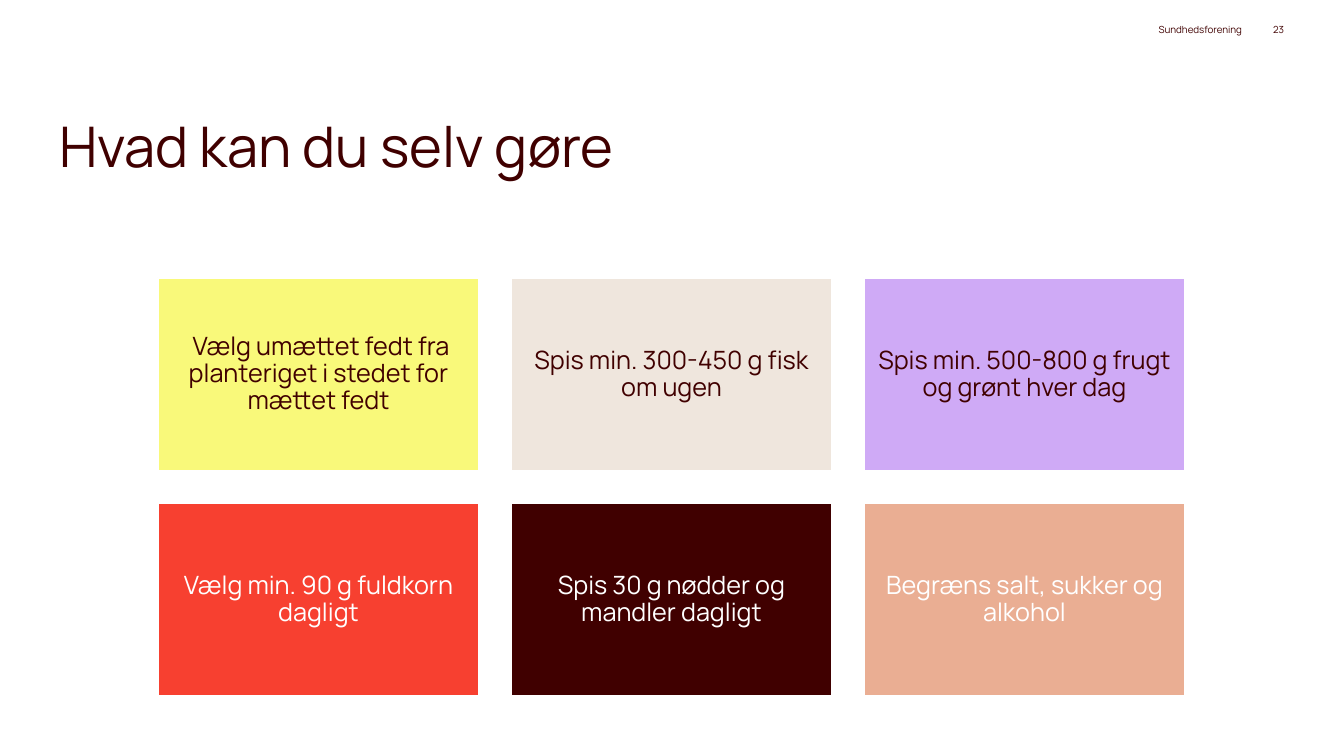
from itertools import product

from pptx import Presentation
from pptx.dml.color import RGBColor
from pptx.enum.shapes import MSO_SHAPE
from pptx.enum.text import MSO_ANCHOR, MSO_AUTO_SIZE, PP_ALIGN
from pptx.util import Emu, Pt

DARK, WHITE = "400000", "FFFFFF"


def px(n):
    return Emu(round(n * 914400 / 100.8))


def paint(target, color):
    target.rgb = RGBColor.from_string(color)


def assign(target, values):
    for name, value in values.items():
        setattr(target, name, value)


class Deck:
    font = "Manrope"

    def __init__(self, wide, high):
        self.file = Presentation()
        assign(self.file, {"slide_width": px(wide), "slide_height": px(high)})
        self.slide = self.file.slides.add_slide(self.file.slide_layouts[5])

    def letter(self, shape, text, size, color, align, anchor, inset=0, lead=1.0):
        frame = shape.text_frame
        sides = ("left", "top", "right", "bottom")
        assign(frame, {f"margin_{side}": px(inset) for side in sides})
        assign(frame, {"text": text, "word_wrap": True,
                       "auto_size": MSO_AUTO_SIZE.NONE, "vertical_anchor": anchor})
        line = frame.paragraphs[0]
        assign(line, {"alignment": align, "line_spacing": lead})
        font = line.runs[0].font
        assign(font, {"name": self.font, "size": Pt(size)})
        paint(font.color, color)

    def title(self, text, x, y, w, h):
        shape = self.slide.shapes.title
        assign(shape, {"left": px(x), "top": px(y), "width": px(w), "height": px(h)})
        self.letter(shape, text, 40, DARK, PP_ALIGN.LEFT, MSO_ANCHOR.BOTTOM, lead=0.95)

    def label(self, text, x, y, w, h):
        shape = self.slide.shapes.add_textbox(px(x), px(y), px(w), px(h))
        self.letter(shape, text, 7, DARK, PP_ALIGN.RIGHT, MSO_ANCHOR.MIDDLE)

    def card(self, text, x, y, w, h, fill, color):
        shape = self.slide.shapes.add_shape(
            MSO_SHAPE.RECTANGLE, px(x), px(y), px(w), px(h))
        shape.shadow.inherit = False
        shape.fill.solid()
        paint(shape.fill.fore_color, fill)
        paint(shape.line.color, WHITE)
        shape.line.width = Pt(1)
        self.letter(shape, text, 18, color, PP_ALIGN.CENTER, MSO_ANCHOR.MIDDLE, 7, 0.9)


def main():
    deck = Deck(1344, 756)

    # Title and page header
    deck.title("Hvad kan du selv gøre", 59, 51, 601, 129)
    deck.label("Sundhedsforening", 682, 20, 560, 20)
    deck.label("23", 1245, 20, 39, 20)

    # Advice cards, three to a row
    cards = [
        (" Vælg umættet fedt fra planteriget i stedet for mættet fedt", "F9F97A", DARK),
        ("Spis min. 300-450 g fisk om ugen", "EFE6DD", DARK),
        ("Spis min. 500-800 g frugt og grønt hver dag", "CFAAF6", DARK),
        ("Vælg min. 90 g fuldkorn dagligt", "F74030", WHITE),
        ("Spis 30 g nødder og mandler dagligt", DARK, WHITE),
        ("Begræns salt, sukker og alkohol", "EAAE93", WHITE),
    ]
    wide, high, gap = 321, 193, 32
    for (row, col), (text, fill, color) in zip(product(range(2), range(3)), cards):
        x, y = 158 + col * (wide + gap), 278 + row * (high + gap)
        deck.card(text, x, y, wide, high, fill, color)

    deck.file.save("out.pptx")


if __name__ == "__main__":
    main()
